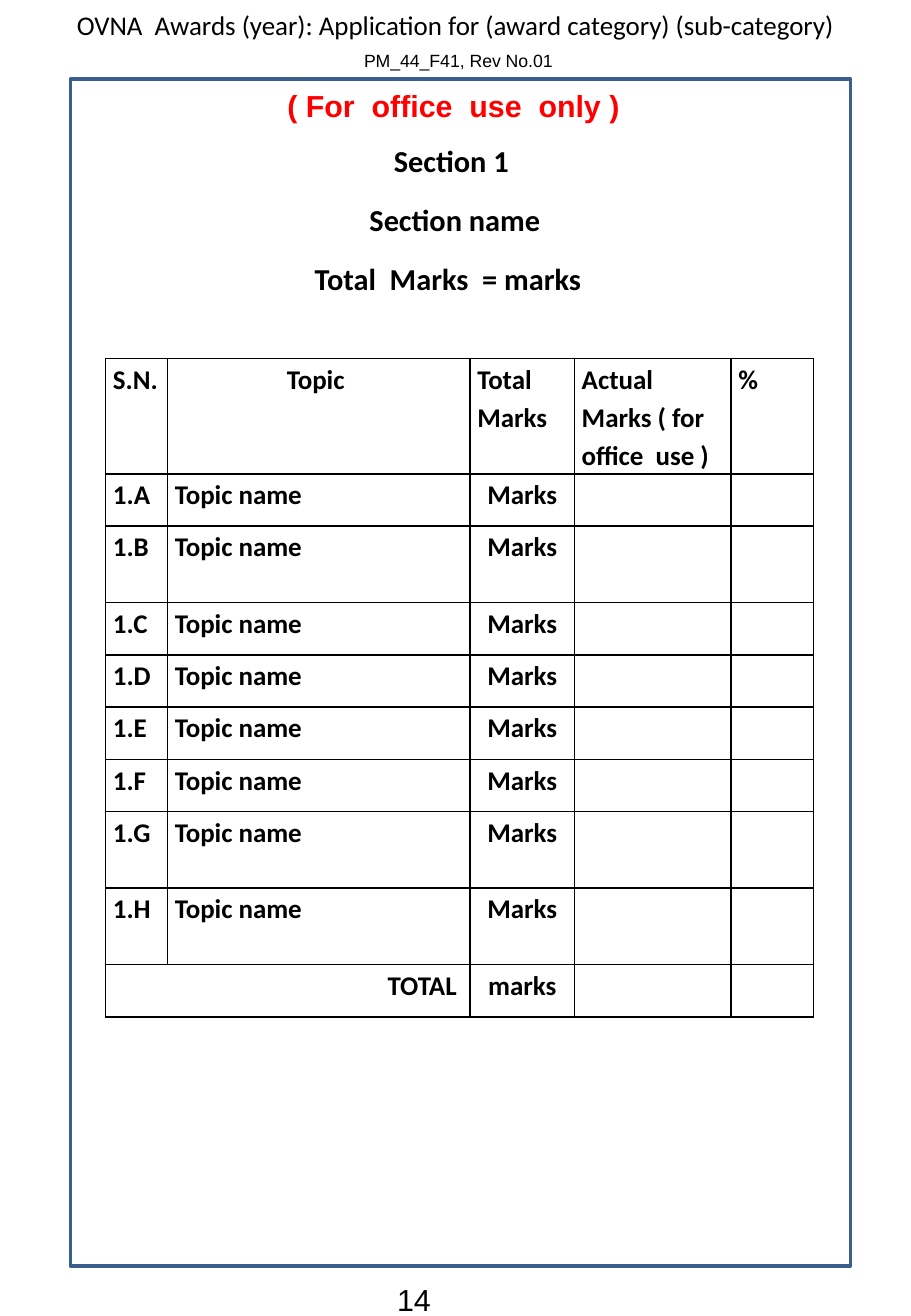
from lxml import etree
from pptx import Presentation
from pptx.dml.color import RGBColor
from pptx.enum.shapes import MSO_SHAPE
from pptx.enum.text import MSO_AUTO_SIZE, PP_ALIGN
from pptx.oxml.ns import qn
from pptx.util import Inches, Pt

LEFT, CENTER, RIGHT = PP_ALIGN.LEFT, PP_ALIGN.CENTER, PP_ALIGN.RIGHT
RECTANGLE = MSO_SHAPE.RECTANGLE
GROW = MSO_AUTO_SIZE.SHAPE_TO_FIT_TEXT

COLOURS = {"ink": "000000", "alert": "FF0000", "paper": "FFFFFF", "frame": "3A5F8C"}

COLUMN_WIDTHS = [0.51, 2.49, 0.86, 1.29, 0.68]
HEADINGS = ["S.N.", "Topic ", "Total Marks", "Actual Marks ( for office  use )", "%"]
HEADING_HEIGHT, SHORT_ROW, TALL_ROW = 0.95, 0.43, 0.63
TOPICS = "ABCDEFGH"
TALL_TOPICS = "BGH"


def colour(name):
    return RGBColor.from_string(COLOURS[name])


class FormPage:
    body_font = "Calibri"
    label_font = "Arial"
    line_spacing = 1.15
    space_after = Pt(10)

    def __init__(self, page):
        self.page = page

    def add_span(self, para, text, size, font, bold=False, ink="ink"):
        span = para.add_run()
        span.text = text
        span.font.size = Pt(size)
        span.font.name = font
        span.font.bold = bold
        span.font.color.rgb = colour(ink)

    def space_out(self, para):
        para.line_spacing = self.line_spacing
        para.space_after = self.space_after

    def text_box(self, left, top, width, height, lines, align=LEFT, wrap=True, spaced=False):
        """Each line is a list of spans: (text, size, font[, bold[, ink]])."""
        box = self.page.shapes.add_textbox(*map(Inches, (left, top, width, height)))
        frame = box.text_frame
        frame.word_wrap = wrap
        frame.auto_size = GROW
        for index, spans in enumerate(lines):
            para = frame.add_paragraph() if index else frame.paragraphs[0]
            para.alignment = align
            if spaced:
                self.space_out(para)
            for span in spans:
                self.add_span(para, *span)

    def border(self, left, top, width, height):
        box = self.page.shapes.add_shape(RECTANGLE, *map(Inches, (left, top, width, height)))
        box.shadow.inherit = False
        box.fill.solid()
        box.fill.fore_color.rgb = colour("paper")
        box.line.color.rgb = colour("frame")
        box.line.width = Pt(2)

    def rule_cell(self, cell):
        """Draw thin lines on all four sides of a cell and leave it unfilled."""
        properties = cell._tc.get_or_add_tcPr()
        for side in ("a:lnL", "a:lnR", "a:lnT", "a:lnB"):
            line = etree.SubElement(properties, qn(side), w=str(Pt(1)))
            fill = etree.SubElement(line, qn("a:solidFill"))
            etree.SubElement(fill, qn("a:srgbClr"), val=COLOURS["ink"])
        cell.fill.background()

    def fill_cell(self, cell, text, align=LEFT):
        para = cell.text_frame.paragraphs[0]
        para.alignment = align
        self.space_out(para)
        self.add_span(para, text, 16, self.body_font, True)

    def table(self, left, top, widths, heights):
        table = self.page.shapes.add_table(
            len(heights), len(widths), Inches(left), Inches(top),
            Inches(sum(widths)), Inches(sum(heights))).table
        table.first_row = False
        table.horz_banding = False
        for column, width in zip(table.columns, widths):
            column.width = Inches(width)
        for row, height in zip(table.rows, heights):
            row.height = Inches(height)
        for cell in table.iter_cells():
            cell.margin_left = cell.margin_right = Inches(0.06)
            cell.margin_top = cell.margin_bottom = 0
            self.rule_cell(cell)
        return table


def add_marks_table(form):
    topic_heights = [TALL_ROW if topic in TALL_TOPICS else SHORT_ROW for topic in TOPICS]
    table = form.table(0.87, 2.95, COLUMN_WIDTHS, [HEADING_HEIGHT, *topic_heights, SHORT_ROW])
    for column, heading in enumerate(HEADINGS):
        form.fill_cell(table.cell(0, column), heading, CENTER if column == 1 else LEFT)
    for row, topic in enumerate(TOPICS, start=1):
        form.fill_cell(table.cell(row, 0), f"1.{topic}")
        form.fill_cell(table.cell(row, 1), "Topic name")
        form.fill_cell(table.cell(row, 2), "Marks", CENTER)
    total_row = len(TOPICS) + 1
    table.cell(total_row, 0).merge(table.cell(total_row, 1))
    form.fill_cell(table.cell(total_row, 0), "TOTAL ", RIGHT)
    form.fill_cell(table.cell(total_row, 2), "marks", CENTER)


def main():
    deck = Presentation()
    deck.slide_width = Inches(7.5)
    deck.slide_height = Inches(10.83)
    form = FormPage(deck.slides.add_slide(deck.slide_layouts[6]))
    body, label = form.body_font, form.label_font

    form.text_box(3.17, 10.49, 1.42, 0.4, [[("14", 18, label)]])
    title = "OVNA  Awards (year): Application for (award category) (sub-category)"
    form.text_box(0, 0.02, 7.5, 0.64, [
        [(title, 16, body)],
        [(" ", 16, body), ("PM_44_F41, Rev No.01", 10.5, label)],
    ], CENTER)
    form.border(0.58, 0.65, 6.42, 9.77)
    section_lines = ["Section 1 ", "Section name", "Total  Marks  = marks  "]
    form.text_box(1.08, 1.08, 5.33, 1.43,
                  [[(line, 18, body, True)] for line in section_lines], CENTER, spaced=True)
    add_marks_table(form)
    form.text_box(2.25, 0.67, 2.97, 0.4,
                  [[("( For  office  use  only )", 18, label, True, "alert")]],
                  CENTER, wrap=False)
    deck.save("out.pptx")


if __name__ == "__main__":
    main()
